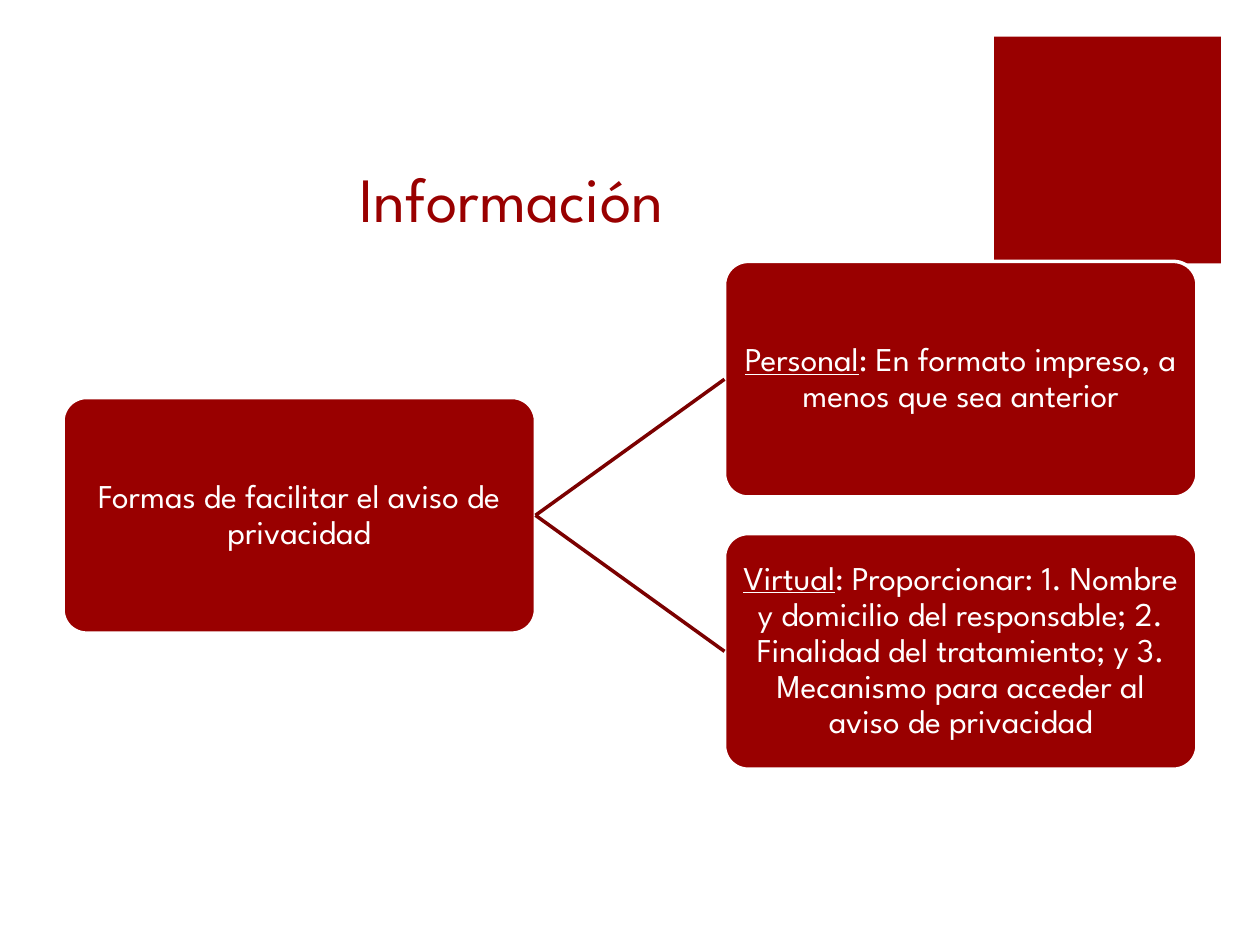
from pptx import Presentation
from pptx.dml.color import RGBColor
from pptx.enum.shapes import MSO_CONNECTOR, MSO_SHAPE
from pptx.enum.text import MSO_ANCHOR, PP_ALIGN
from pptx.oxml.ns import qn
from pptx.util import Inches, Pt
from lxml.etree import SubElement

HEADING = "Información"
ROOT = ("", "Formas de facilitar el aviso de privacidad")
BRANCHES = [
    ("Personal", ": En formato impreso, a menos que sea anterior"),
    ("Virtual", ": Proporcionar: 1. Nombre y domicilio del responsable; "
                "2. Finalidad del tratamiento; y 3. Mecanismo para acceder "
                "al aviso de privacidad"),
]

COLORS = {"red": "990000", "dark": "7B0000", "white": "FFFFFF"}
FONT = "League Spartan"
NODE_W, NODE_H = 3.75, 1.87
ROOT_X, BRANCH_X = 0.5, 5.75
CENTER_Y = 4.09
PITCH = 2.16


def color(name):
    return RGBColor.from_string(COLORS[name])


def write(frame, text, lead="", size=19, ink="white", anchor=MSO_ANCHOR.MIDDLE,
          inset=0.07, spacing=0.9):
    frame.word_wrap = True
    frame.vertical_anchor = anchor
    frame.margin_left = frame.margin_right = Inches(inset)
    frame.margin_top = frame.margin_bottom = Inches(inset)
    paragraph = frame.paragraphs[0]
    paragraph.alignment = PP_ALIGN.CENTER
    paragraph.line_spacing = spacing
    for part, underlined in ((lead, True), (text, False)):
        if part:
            run = paragraph.add_run()
            run.text = part
            run.font.name = FONT
            run.font.size = Pt(size)
            run.font.underline = underlined
            run.font.color.rgb = color(ink)


def add_block(slide, kind, left, top, width, height):
    block = slide.shapes.add_shape(
        kind, Inches(left), Inches(top), Inches(width), Inches(height))
    block.shadow.inherit = False
    block.fill.solid()
    block.fill.fore_color.rgb = color("red")
    block.line.fill.background()
    return block


def add_node(slide, content, left, center_y):
    node = add_block(slide, MSO_SHAPE.ROUNDED_RECTANGLE,
                     left, center_y - NODE_H / 2, NODE_W, NODE_H)
    node.adjustments[0] = 0.1
    node.line.color.rgb = color("white")
    node.line.width = Pt(2)
    lead, text = content
    write(node.text_frame, text, lead=lead)
    return node


def add_link(slide, start, end):
    link = slide.shapes.add_connector(MSO_CONNECTOR.STRAIGHT, 0, 0, 0, 0)
    link.begin_connect(start, 3)
    link.end_connect(end, 1)
    link.line.color.rgb = color("dark")
    link.line.width = Pt(2)
    SubElement(link._element.spPr, qn("a:effectLst"))


def main():
    prs = Presentation()
    prs.slide_width, prs.slide_height = Inches(10), Inches(7.5)
    slide = prs.slides.add_slide(prs.slide_layouts[5])

    add_block(slide, MSO_SHAPE.RECTANGLE, 7.89, 0.29, 1.8, 1.8)

    title = slide.shapes.title
    title.left, title.top = Inches(0.5), Inches(0.67)
    title.width, title.height = Inches(7.12), Inches(1.25)
    write(title.text_frame, HEADING, size=36, ink="red",
          anchor=MSO_ANCHOR.BOTTOM, inset=0.05, spacing=1.0)

    root = add_node(slide, ROOT, ROOT_X, CENTER_Y)
    for i, content in enumerate(BRANCHES):
        center_y = CENTER_Y + (i - (len(BRANCHES) - 1) / 2) * PITCH
        branch = add_node(slide, content, BRANCH_X, center_y)
        add_link(slide, root, branch)

    prs.save("out.pptx")


if __name__ == "__main__":
    main()
